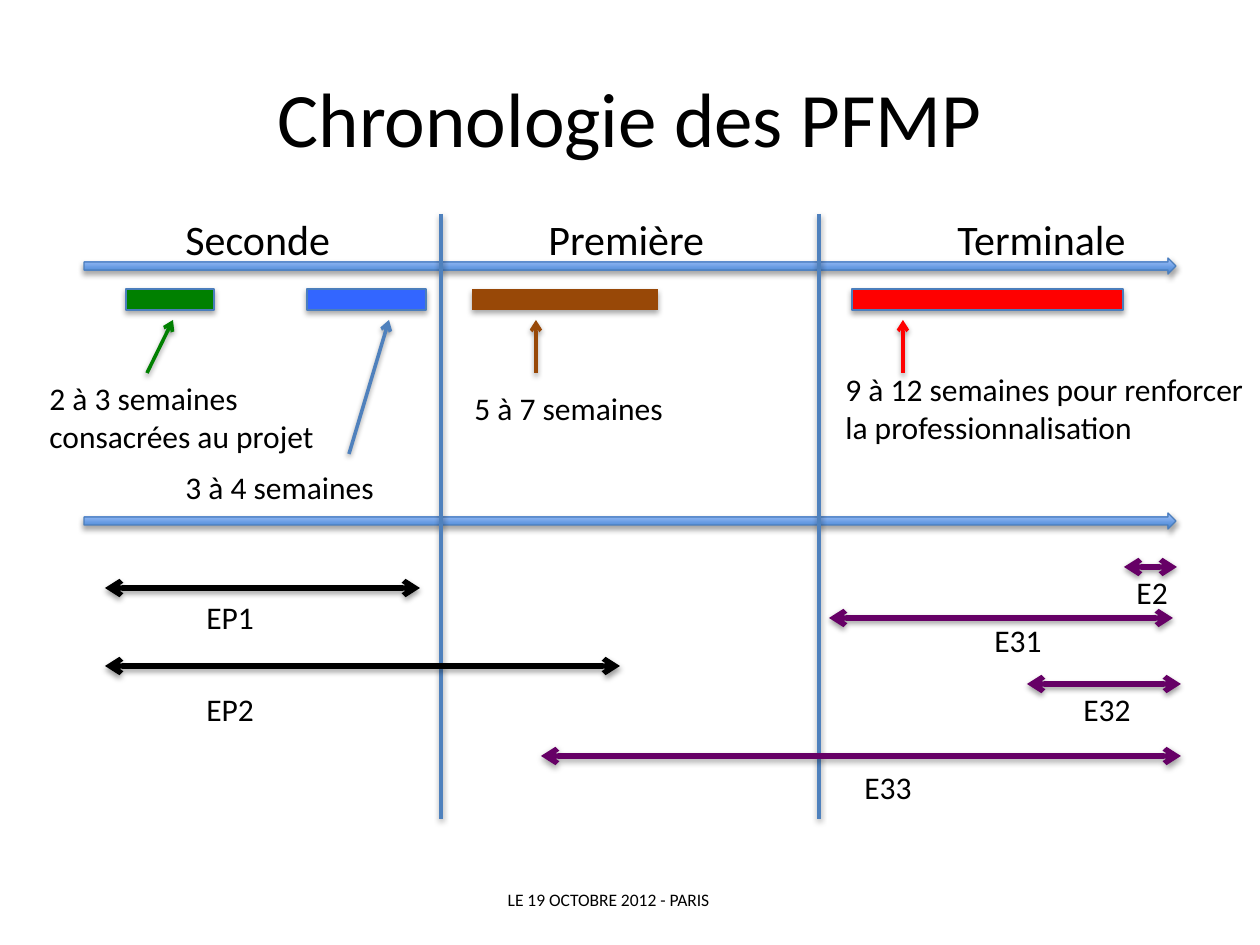
from lxml import etree
from pptx import Presentation
from pptx.dml.color import RGBColor
from pptx.enum.shapes import MSO_CONNECTOR, MSO_SHAPE
from pptx.enum.text import MSO_ANCHOR, PP_ALIGN
from pptx.oxml.ns import qn
from pptx.util import Pt

RECT, RIGHT_ARROW = MSO_SHAPE.RECTANGLE, MSO_SHAPE.RIGHT_ARROW
STRAIGHT = MSO_CONNECTOR.STRAIGHT
LEFT, CENTER = PP_ALIGN.LEFT, PP_ALIGN.CENTER
TOP, MIDDLE = MSO_ANCHOR.TOP, MSO_ANCHOR.MIDDLE
PX = 914400 // 126
FONT = "Calibri"

COLORS = {
    "black": "000000", "axis": "4F81BD", "border": "4B7EBC",
    "axis_dark": "3F80CE", "axis_light": "A4C4FF",
    "green": "008000", "blue": "3366FF", "brown": "984807",
    "red": "FF0000", "purple": "660066",
}

TITLE = ("Chronologie des PFMP", 63, 38, 1134, 158)
FOOTER = ("LE 19 OCTOBRE 2012 - PARIS", 451, 883, 315, 34)

AXIS_X, AXIS_W, AXIS_H = 84, 1092, 16
AXES_Y = [258, 513]
DIVIDERS_X = [441, 819]
DIVIDER_TOP, DIVIDER_BOTTOM = 214, 819

YEARS_Y = 207
YEARS = [("Seconde", 173, 171), ("Première", 536, 183), ("Terminale", 945, 195)]

BAR_Y, BAR_H = 289, 21
BARS = [
    (126, 88, "green", "border"),
    (307, 119, "blue", "border"),
    (472, 186, "brown", None),
    (852, 271, "red", "border"),
]

POINTER_TIP = 320
POINTERS = [
    (147, 373, 173, "green"),
    (349, 454, 389, "axis"),
    (536, 373, 536, "brown"),
    (903, 373, 903, "red"),
]

DURATIONS = [
    (["2 à 3 semaines", "consacrées au projet"], 37, 373, 292),
    (["3 à 4 semaines"], 173, 462, 217),
    (["5 à 7 semaines"], 462, 383, 217),
    (["9 à 12 semaines pour renforcer", "la professionnalisation"], 833, 364, 427),
]

EXAMS = [
    ("EP1", 105, 420, 588, "black", 194, 592),
    ("EP2", 105, 620, 666, "black", 194, 684),
    ("E2", 1124, 1177, 567, "purple", 1124, 567),
    ("E31", 829, 1173, 618, "purple", 982, 615),
    ("E32", 1027, 1181, 684, "purple", 1071, 684),
    ("E33", 541, 1181, 756, "purple", 852, 762),
]


def rgb(name):
    return RGBColor.from_string(COLORS[name])


def add_shadow(sp, dist, opacity):
    effects = etree.SubElement(sp._element.spPr, qn("a:effectLst"))
    shadow = etree.SubElement(effects, qn("a:outerShdw"), blurRad="40000",
                              dist=str(dist), dir="5400000", rotWithShape="0")
    color = etree.SubElement(shadow, qn("a:srgbClr"), val=COLORS["black"])
    etree.SubElement(color, qn("a:alpha"), val=str(opacity * 1000))


def add_text(s, lines, x, y, w, h, size, align=LEFT, anchor=TOP, wrap=False):
    tf = s.shapes.add_textbox(x * PX, y * PX, w * PX, h * PX).text_frame
    tf.word_wrap = wrap
    tf.vertical_anchor = anchor
    tf.text = "\n".join(lines)
    for p in tf.paragraphs:
        p.alignment = align
        p.font.name = FONT
        p.font.size = Pt(size)
        p.font.color.rgb = rgb("black")


def add_block(s, kind, x, y, w, h, fill, border):
    sp = s.shapes.add_shape(kind, x * PX, y * PX, w * PX, h * PX)
    if isinstance(fill, tuple):
        sp.fill.gradient()
        sp.fill.gradient_angle = 90
        for stop, name in zip(sp.fill.gradient_stops, fill):
            stop.color.rgb = rgb(name)
    else:
        sp.fill.solid()
        sp.fill.fore_color.rgb = rgb(fill)
    if border:
        sp.line.color.rgb = rgb(border)
        sp.line.width = Pt(0.75)
    else:
        sp.line.fill.background()
    add_shadow(sp, 23000, 35)


def add_line(s, x1, y1, x2, y2, color, width, ends=()):
    sp = s.shapes.add_connector(STRAIGHT, x1 * PX, y1 * PX, x2 * PX, y2 * PX)
    sp.line.color.rgb = rgb(color)
    sp.line.width = Pt(width)
    for end in ends:
        etree.SubElement(sp.line._get_or_add_ln(), qn(f"a:{end}"), type="arrow")
    add_shadow(sp, 20000, 38)


def main():
    prs = Presentation()
    prs.slide_width, prs.slide_height = 1260 * PX, 945 * PX
    s = prs.slides.add_slide(prs.slide_layouts[6])

    add_text(s, [FOOTER[0]], *FOOTER[1:], 10, CENTER, wrap=True)
    add_text(s, [TITLE[0]], *TITLE[1:], 44, CENTER, MIDDLE, True)

    for y in AXES_Y:
        add_block(s, RIGHT_ARROW, AXIS_X, y, AXIS_W, AXIS_H,
                  ("axis_dark", "axis_light"), "border")
    for x in DIVIDERS_X:
        add_line(s, x, DIVIDER_TOP, x, DIVIDER_BOTTOM, "axis", 2)
    for year, x, w in YEARS:
        add_text(s, [year], x, YEARS_Y, w, 63, 24)

    for x, w, fill, border in BARS:
        add_block(s, RECT, x, BAR_Y, w, BAR_H, fill, border)
    for x, y, tip_x, color in POINTERS:
        add_line(s, x, y, tip_x, POINTER_TIP, color, 2, ["tailEnd"])
    for lines, x, y, w in DURATIONS:
        add_text(s, lines, x, y, w, 12 + 38 * len(lines), 18)

    for exam, x1, x2, y, color, label_x, label_y in EXAMS:
        add_line(s, x1, y, x2, y, color, 3, ["headEnd", "tailEnd"])
        add_text(s, [exam], label_x, label_y, 57 if len(exam) == 2 else 73, 50, 18)

    prs.save("out.pptx")


if __name__ == "__main__":
    main()
